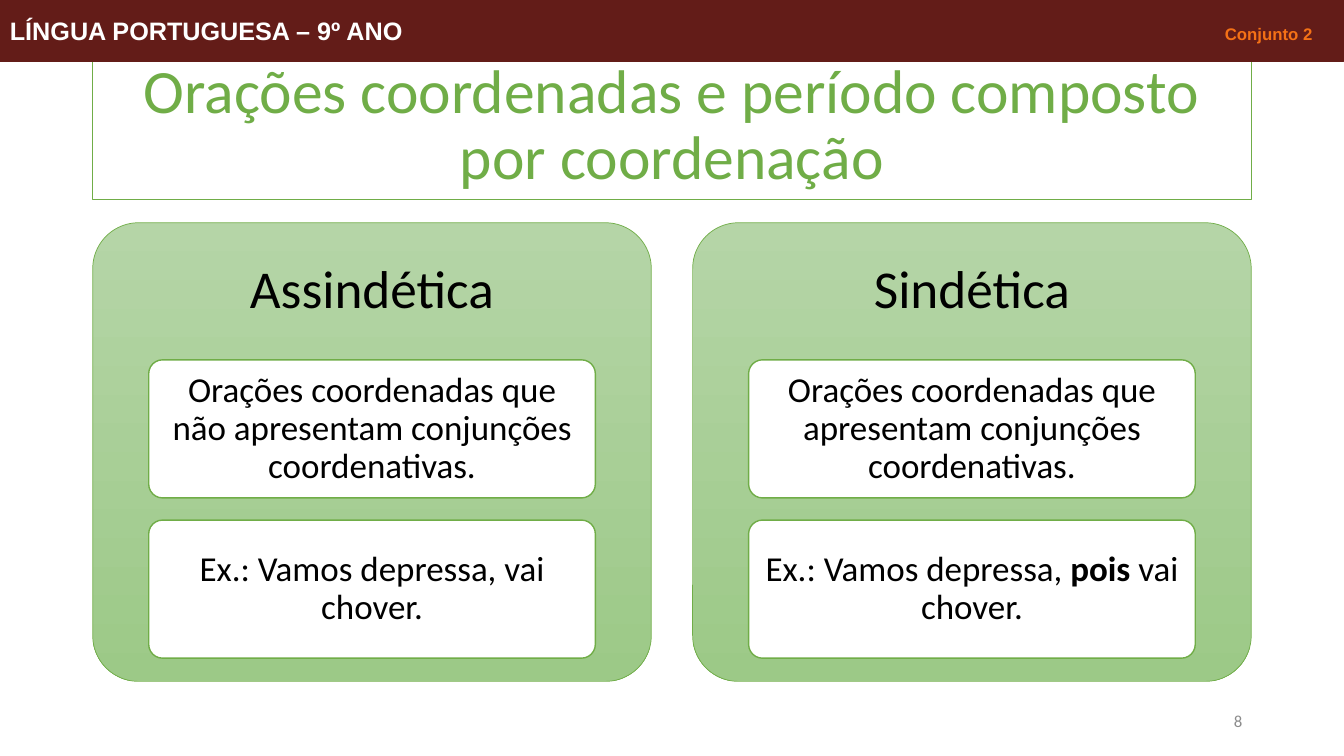
from lxml import etree
from pptx import Presentation
from pptx.dml.color import RGBColor
from pptx.enum.shapes import MSO_SHAPE
from pptx.enum.text import MSO_ANCHOR, MSO_AUTO_SIZE, PP_ALIGN
from pptx.oxml.ns import qn
from pptx.util import Inches, Pt

RECT, ROUND = MSO_SHAPE.RECTANGLE, MSO_SHAPE.ROUNDED_RECTANGLE
MIDDLE, FIXED = MSO_ANCHOR.MIDDLE, MSO_AUTO_SIZE.NONE
LEFT, CENTER, RIGHT = PP_ALIGN.LEFT, PP_ALIGN.CENTER, PP_ALIGN.RIGHT

GREEN = RGBColor(0x70, 0xAD, 0x47)
PALE = RGBColor(0xB5, 0xD5, 0xA7)
DEEP = RGBColor(0x9C, 0xC9, 0x87)
MAROON = RGBColor(0x63, 0x1C, 0x18)
ORANGE = RGBColor(0xF4, 0x71, 0x16)
GRAY = RGBColor(0x8C, 0x8C, 0x8C)
WHITE = RGBColor(0xFF, 0xFF, 0xFF)
BLACK = RGBColor(0, 0, 0)

# Grid: two columns of panels, each with a heading row and two card rows
WIDE, HIGH = 13.33, 7.5
EDGE, TOP = 0.92, 2.21
PANEL_W, PANEL_H, COL = 5.54, 4.55, 5.95
CARD_W, CARD_H, ROW = 4.43, 1.37, 1.59
HEAD_H = 1.36

prs = Presentation()
prs.slide_width, prs.slide_height = Inches(WIDE), Inches(HIGH)
slide = prs.slides.add_slide(prs.slide_layouts[5])
shapes = slide.shapes


def add_box(kind, x, y, w, h, line, weight):
    box = shapes.add_shape(kind, Inches(x), Inches(y), Inches(w), Inches(h))
    box.shadow.inherit = False
    box.line.color.rgb = line
    box.line.width = Pt(weight)
    if kind == ROUND:
        box.adjustments[0] = 0.1
    return box


def set_text(box, runs, size, color, align=CENTER, pad=(0.1, 0.05),
             font="Calibri", space=0.9):
    frame = box.text_frame
    frame.word_wrap = True
    frame.auto_size = FIXED
    frame.vertical_anchor = MIDDLE
    frame.margin_left = frame.margin_right = Inches(pad[0])
    frame.margin_top = frame.margin_bottom = Inches(pad[1])
    para = frame.paragraphs[0]
    para.alignment = align
    para.line_spacing = space
    para.font.name = font
    para.font.size = Pt(size)
    para.font.color.rgb = color
    for part in runs:
        para.add_run().text = part
    return para


# Panels with their headings and cards
panels = [
    ("Assindética", [
        ["Orações coordenadas que não apresentam conjunções coordenativas."],
        ["Ex.: Vamos depressa, vai chover."]]),
    ("Sindética", [
        ["Orações coordenadas que apresentam conjunções coordenativas."],
        ["Ex.: Vamos depressa, ", "pois", " vai chover."]]),
]
for col, (head, cards) in enumerate(panels):
    x = EDGE + col * COL
    panel = add_box(ROUND, x, TOP, PANEL_W, PANEL_H, GREEN, 0.5)
    panel.fill.gradient()
    panel.fill.gradient_angle = 270
    for stop, tint in zip(panel.fill.gradient_stops, (PALE, DEEP)):
        stop.color.rgb = tint
    label = shapes.add_textbox(Inches(x), Inches(TOP),
                               Inches(PANEL_W), Inches(HEAD_H))
    set_text(label, [head], 38, BLACK, pad=(0.16, 0.16))

    for row, runs in enumerate(cards):
        card = add_box(ROUND, x + (PANEL_W - CARD_W) / 2,
                       TOP + HEAD_H + row * ROW, CARD_W, CARD_H, GREEN, 1)
        card.fill.solid()
        card.fill.fore_color.rgb = WHITE
        para = set_text(card, runs, 25, BLACK, pad=(0.07, 0.05))
        for run in para.runs[1:2]:
            run.font.bold = True

# Title, framed and partly under the top bar
title = shapes.title
title.left, title.top = Inches(EDGE), Inches(0.53)
title.width, title.height = Inches(WIDE - 2 * EDGE), Inches(1.45)
title.line.color.rgb = GREEN
title.line.width = Pt(0.75)
set_text(title, ["Orações coordenadas e período composto por coordenação"],
         44, GREEN)
shapes._spTree.append(title._element)

# Page number
page = shapes.add_textbox(Inches(9.42), Inches(6.95), Inches(3), Inches(0.4))
set_text(page, ["8"], 12, GRAY, RIGHT, space=1.0)

# Top bar with a right tab for the set name
bar = add_box(RECT, 0, 0, WIDE, 0.61, MAROON, 0.75)
bar.fill.solid()
bar.fill.fore_color.rgb = MAROON
props = bar.text_frame.paragraphs[0]._p.get_or_add_pPr()
tabs = etree.SubElement(props, qn("a:tabLst"))
etree.SubElement(tabs, qn("a:tab"), pos=str(Inches(12.92)), algn="r")
para = set_text(bar, ["LÍNGUA PORTUGUESA – 9º ANO\t", "Conjunto 2"],
                18, WHITE, LEFT, font="Arial", space=1.0)
para.font.bold = True
group = para.runs[1].font
group.size = Pt(12)
group.color.rgb = ORANGE

prs.save("out.pptx")
